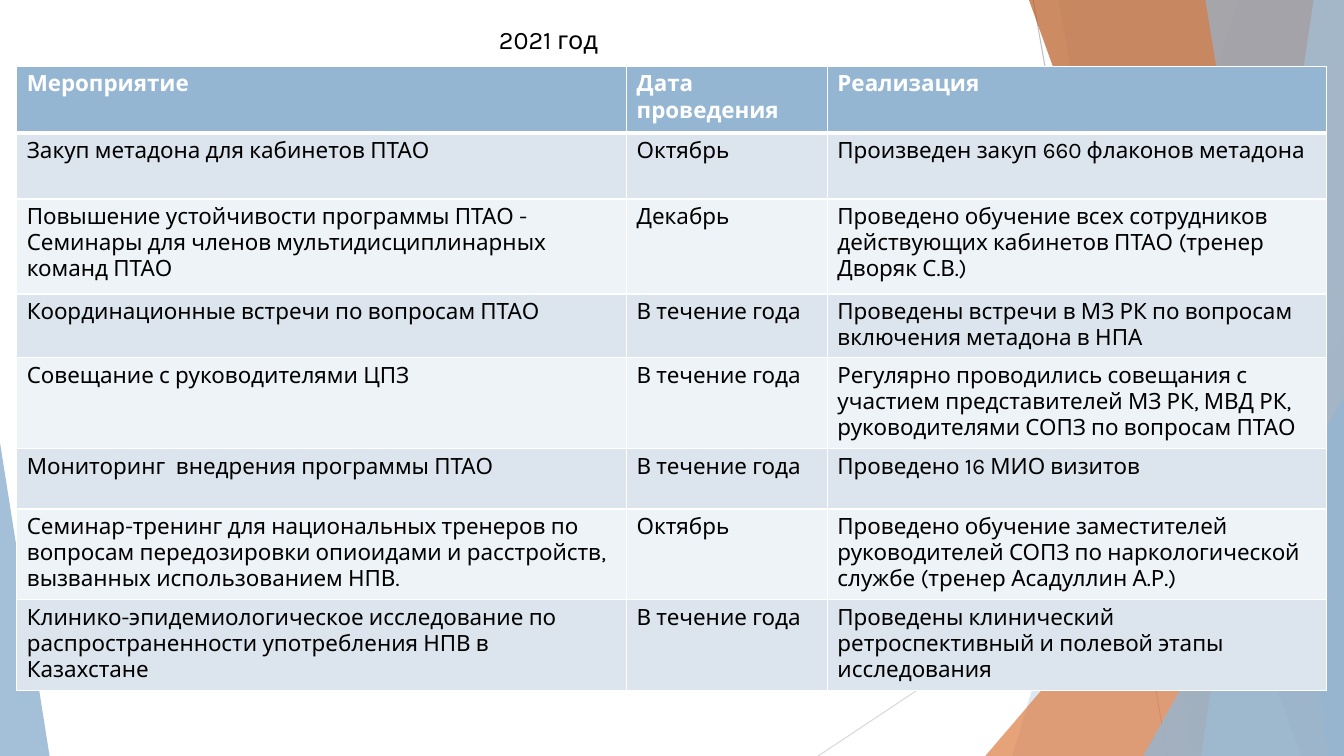
import pptx
import pptx.util
import pptx.dml.color
import pptx.enum.shapes
import pptx.enum.text
import pptx.oxml
import pptx.oxml.ns

RGB = pptx.dml.color.RGBColor
WHITE = RGB(0xFF, 0xFF, 0xFF)
BLACK = RGB(0, 0, 0)
BLUE = RGB(0x94, 0xB6, 0xD2)
SKY = RGB(0xBF, 0xD3, 0xE4)
ORANGE = RGB(0xDD, 0x80, 0x47)
BROWN = RGB(0xB9, 0x5B, 0x22)
GRAY = RGB(0xBF, 0xBF, 0xBF)
SILVER = RGB(0xD9, 0xD9, 0xD9)
DARK = RGB(0xDC, 0xE5, 0xEE)
LIGHT = RGB(0xEE, 0xF3, 0xF7)

FONT = "Karla"
COLS, ROWS = 160, 90
UNIT = pptx.util.Inches(7.5) / ROWS

YEAR = "В течение года"
PLAN = [
    ("Мероприятие", "Дата проведения", "Реализация"),
    ("Закуп метадона для кабинетов ПТАО", "Октябрь",
     "Произведен закуп 660 флаконов метадона"),
    ("Повышение устойчивости программы ПТАО - Семинары для членов "
     "мультидисциплинарных команд ПТАО", "Декабрь",
     "Проведено обучение всех сотрудников действующих кабинетов ПТАО "
     "(тренер Дворяк С.В.)"),
    ("Координационные встречи по вопросам ПТАО", YEAR,
     "Проведены встречи в МЗ РК по вопросам включения метадона в НПА"),
    ("Совещание с руководителями ЦПЗ", YEAR,
     "Регулярно проводились совещания с участием представителей МЗ РК, "
     "МВД РК, руководителями СОПЗ по вопросам ПТАО"),
    ("Мониторинг  внедрения программы ПТАО", YEAR, "Проведено 16 МИО визитов"),
    ("Семинар-тренинг для национальных тренеров по вопросам передозировки "
     "опиоидами и расстройств, вызванных использованием НПВ.", "Октябрь",
     "Проведено обучение заместителей руководителей СОПЗ по "
     "наркологической службе (тренер Асадуллин А.Р.)"),
    ("Клинико-эпидемиологическое исследование по распространенности "
     "употребления НПВ в Казахстане", YEAR,
     "Проведены клинический ретроспективный и полевой этапы исследования"),
]
WIDTHS = [72.6, 23.9, 59.4]
HEIGHTS = [7.9, 7.9, 11.3] + [7.2] * 5


def grid(*cells):
    return [pptx.util.Emu(round(cell * UNIT)) for cell in cells]


def paint(shape, color, alpha):
    shape.shadow.inherit = False
    shape.line.fill.background()
    shape.fill.solid()
    shape.fill.fore_color.rgb = color
    tone = shape.fill._xPr.find(".//" + pptx.oxml.ns.qn("a:srgbClr"))
    mark = pptx.oxml.ns.qn("a:alpha")
    tone.append(tone.makeelement(mark, {"val": str(alpha * 1000)}))


def add_line(slide, start, end, color):
    kind = pptx.enum.shapes.MSO_CONNECTOR.STRAIGHT
    line = slide.shapes.add_connector(kind, *grid(*start, *end))
    line.line.color.rgb = color
    line.line.width = pptx.util.Pt(0.75)
    props = line._element.spPr
    props.append(props.makeelement(pptx.oxml.ns.qn("a:effectLst"), {}))


def add_band(slide, top, base, color, alpha):
    form = slide.shapes.build_freeform(*grid(top, 0), scale=1.0)
    corners = [(COLS, 0), (COLS, ROWS), (base, ROWS)]
    form.add_line_segments([grid(*spot) for spot in corners], close=True)
    paint(form.convert_to_shape(), color, alpha)


def add_wedge(slide, left, top, width, peak, color, alpha):
    kind = pptx.enum.shapes.MSO_SHAPE.ISOSCELES_TRIANGLE
    wedge = slide.shapes.add_shape(kind, *grid(left, top, width, ROWS - top))
    wedge.adjustments[0] = peak
    paint(wedge, color, alpha)


def add_text(para, text, size, color, bold=False):
    run = para.add_run()
    run.text = text
    run.font.name = FONT
    run.font.size = pptx.util.Pt(size)
    run.font.bold = bold
    run.font.color.rgb = color


def add_title(slide, text):
    box = slide.shapes.add_textbox(*grid(8.9, 2.2, 112.8, 4.9))
    frame = box.text_frame
    frame.word_wrap = True
    frame.vertical_anchor = pptx.enum.text.MSO_ANCHOR.MIDDLE
    para = frame.paragraphs[0]
    para.alignment = pptx.enum.text.PP_ALIGN.CENTER
    add_text(para, text, 18, BLACK)


def add_edge(cell, side, points):
    props = cell._tc.get_or_add_tcPr()
    space = pptx.oxml.ns.nsdecls("a")
    props.append(pptx.oxml.parse_xml(
        f'<a:ln{side} {space} w="{pptx.util.Pt(points)}"><a:solidFill>'
        f'<a:srgbClr val="{WHITE}"/></a:solidFill></a:ln{side}>'))


def fill_cell(cell, row, text):
    thick = {(0, "B"), (1, "T")}
    for side in "LRTB":
        add_edge(cell, side, 3 if (row, side) in thick else 1)
    head = row == 0
    cell.fill.solid()
    cell.fill.fore_color.rgb = BLUE if head else (LIGHT, DARK)[row % 2]
    para = cell.text_frame.paragraphs[0]
    add_text(para, text, 16, WHITE if head else BLACK, head)


def add_plan(slide):
    place = grid(2, 7.9, sum(WIDTHS), sum(HEIGHTS))
    table = slide.shapes.add_table(len(PLAN), len(WIDTHS), *place).table
    for col, width in zip(table.columns, grid(*WIDTHS)):
        col.width = width
    for row, height in zip(table.rows, grid(*HEIGHTS)):
        row.height = height
    for row, texts in enumerate(PLAN):
        for col, text in enumerate(texts):
            fill_cell(table.cell(row, col), row, text)


def add_decor(slide):
    add_line(slide, (123, 0), (139, ROWS), GRAY)
    add_line(slide, (COLS, 48.4), (97.4, ROWS), SILVER)
    add_band(slide, 147.4, 120.5, BLUE, 30)
    add_band(slide, 126, 142, BLUE, 20)
    add_wedge(slide, 117.3, 40, 42.7, 1, ORANGE, 72)
    add_band(slide, 122.5, 154.9, BROWN, 70)
    add_band(slide, 156.4, 143, SKY, 70)
    add_band(slide, 143.5, 158.2, BLUE, 65)
    add_wedge(slide, 136.1, 47.2, 23.9, 1, BLUE, 80)
    add_wedge(slide, 0, 52.7, 5.9, 0, BLUE, 85)


def main():
    deck = pptx.Presentation()
    deck.slide_width, deck.slide_height = grid(COLS, ROWS)
    slide = deck.slides.add_slide(deck.slide_layouts[6])
    add_decor(slide)
    add_title(slide, "2021 год")
    add_plan(slide)
    deck.save("out.pptx")


if __name__ == "__main__":
    main()
